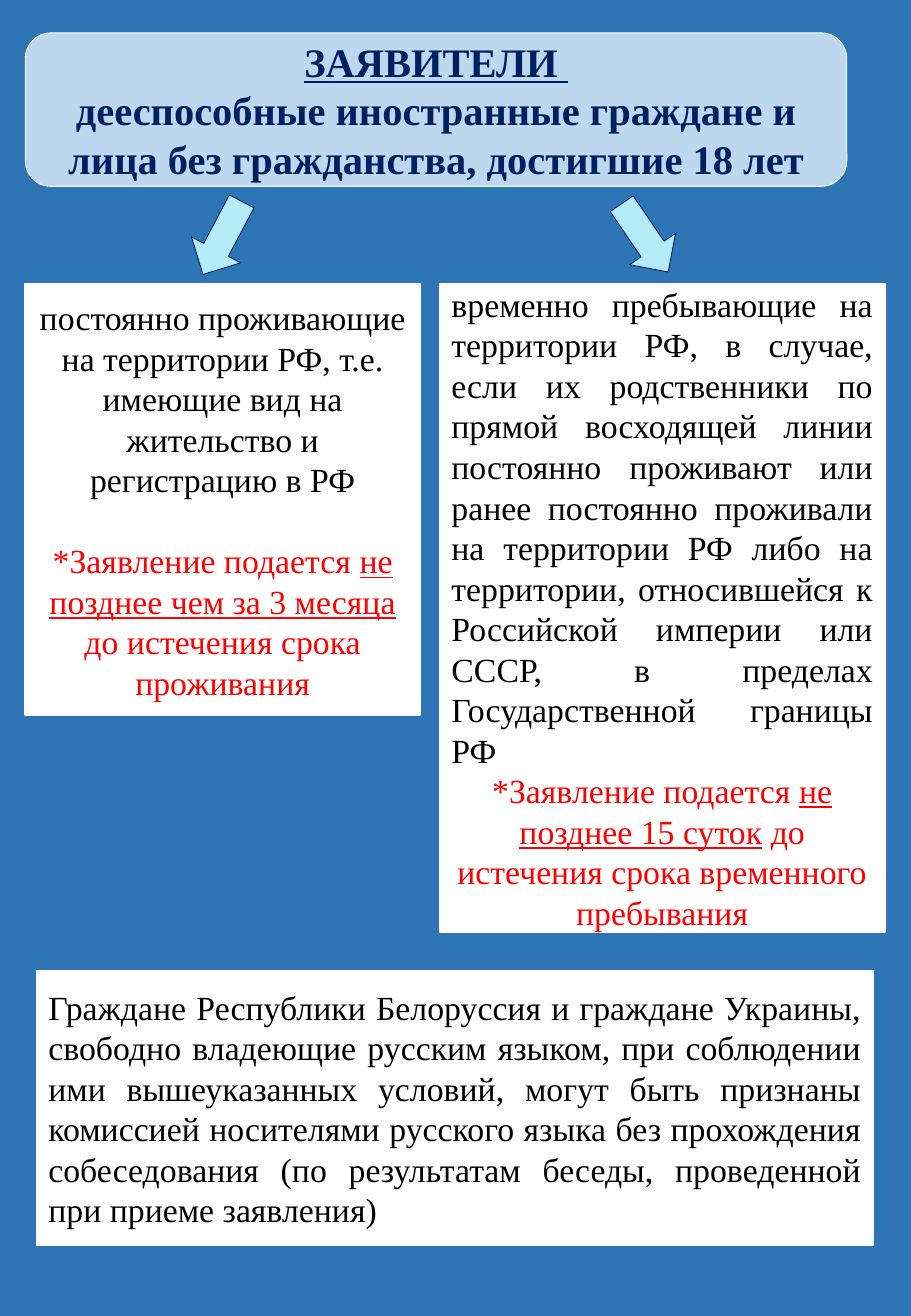
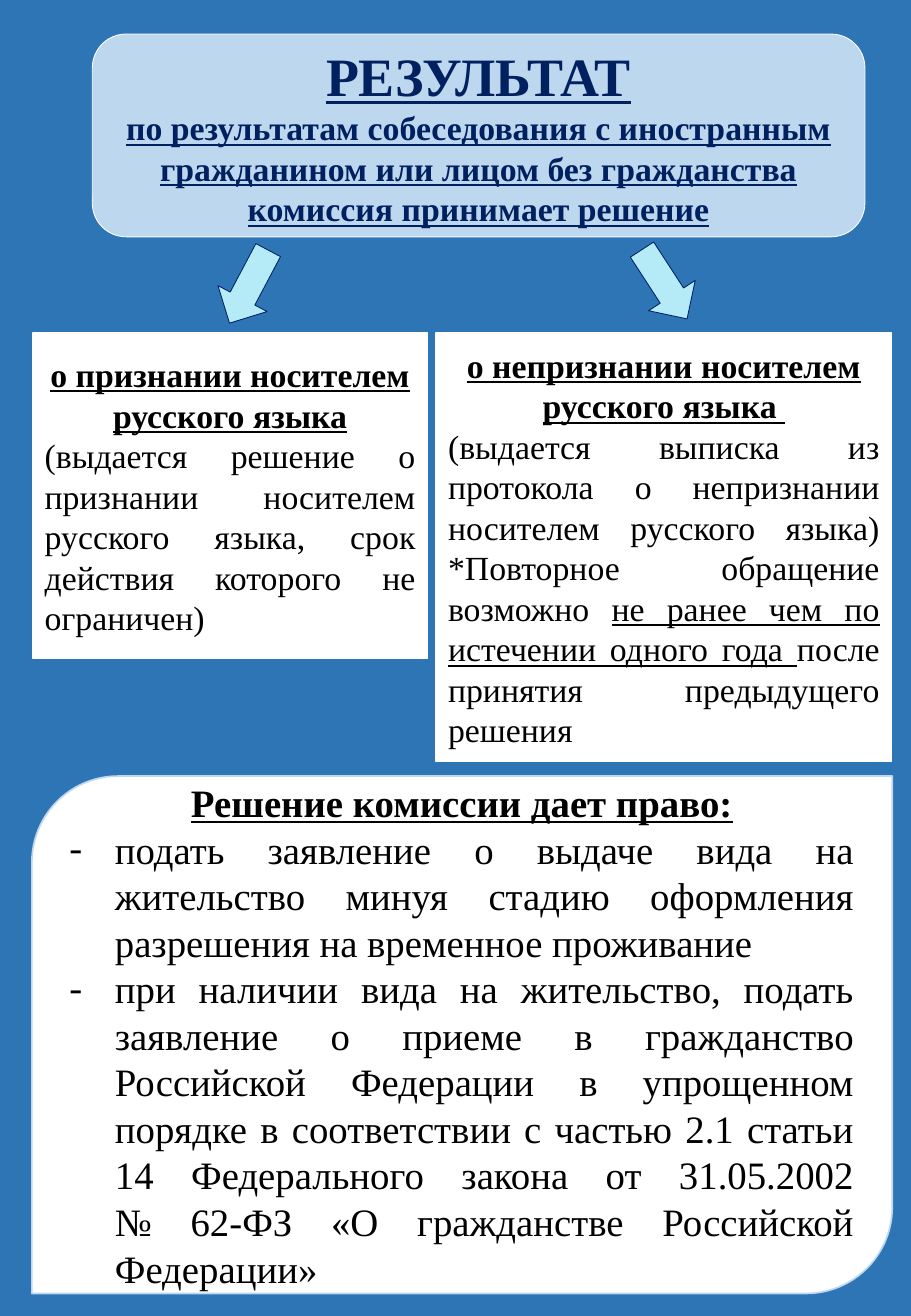
"""Builds two portrait slides on who may apply and what the commission decides."""
from dataclasses import dataclass

from lxml.etree import SubElement
from pptx import Presentation
from pptx.dml.color import RGBColor
from pptx.enum.shapes import MSO_SHAPE
from pptx.enum.text import MSO_ANCHOR, MSO_AUTO_SIZE, PP_ALIGN
from pptx.oxml.ns import qn
from pptx.util import Pt

COLORS = {
    "background": "2E75B6", "heading": "BDD7EE", "navy": "002060",
    "arrow": "B4EBF6", "white": "FFFFFF", "black": "000000", "red": "FF0000",
}
FONT = "Times New Roman"
SIDE_MARGIN = 7.2
CORNER_INSET = 0.0488
ARROW_SIZE = (49, 33)
BULLET_INDENT = 27
CENTER, JUSTIFY = PP_ALIGN.CENTER, PP_ALIGN.JUSTIFY


@dataclass
class Text:
    """A paragraph whose runs are (text, underlined) pairs."""
    runs: list
    align: PP_ALIGN = CENTER
    size: int = 20
    color: str = "black"
    bold: bool = False
    bullet: bool = False
    before: int = 0


SLIDES = [
    {
        "layout": 5,
        "heading": ((15, 19.5, 487, 91), [
            Text([("ЗАЯВИТЕЛИ ", True)], size=24, color="navy", bold=True),
            Text([("дееспособные иностранные граждане и лица без гражданства, "
                   "достигшие 18 лет", False)], size=24, color="navy", bold=True),
        ]),
        "arrows": [(107.3, 124.5, 117.9), (357.8, 124.5, 55.8)],
        "boxes": [
            ((15, 168, 234, 256), [
                Text([("постоянно проживающие на территории РФ, т.е. имеющие вид на "
                       "жительство и регистрацию в РФ", False)]),
                Text([("*Заявление подается ", False),
                      ("не позднее чем за 3 месяца ", True),
                      ("до истечения срока проживания", False)], color="red", before=24),
            ]),
            ((260.5, 168, 264, 384.5), [
                Text([("временно пребывающие на территории РФ, в случае, если их "
                       "родственники по прямой восходящей линии постоянно проживают или "
                       "ранее постоянно проживали на территории РФ либо на территории, "
                       "относившейся к Российской империи или СССР, в пределах "
                       "Государственной границы РФ", False)], JUSTIFY),
                Text([("*Заявление подается ", False), ("не позднее 15 суток", True),
                      (" до истечения срока временного пребывания", False)], color="red"),
            ]),
            ((21.6, 575.3, 496, 162.7), [
                Text([("Граждане Республики Белоруссия и граждане Украины, свободно "
                       "владеющие русским языком, при соблюдении ими вышеуказанных "
                       "условий, могут быть признаны комиссией носителями русского языка "
                       "без прохождения собеседования (по результатам беседы, проведенной "
                       "при приеме заявления)", False)], JUSTIFY),
            ]),
        ],
    },
    {
        "layout": 1,
        "heading": ((54.7, 20.2, 458, 120.2), [
            Text([("РЕЗУЛЬТАТ", True)], size=32, color="navy", bold=True),
            Text([("по результатам собеседования с иностранным гражданином или лицом "
                   "без гражданства комиссия принимает решение", True)],
                 color="navy", bold=True),
        ]),
        "arrows": [(123, 153.4, 117.9), (369.4, 152, 57)],
        "boxes": [
            ((19.4, 197.3, 234, 193), [
                Text([("о признании носителем русского языка", True)], bold=True),
                Text([("(выдается решение о признании носителем русского языка, срок "
                       "действия которого не ограничен)", False)], JUSTIFY),
            ]),
            ((258.5, 197.3, 270, 254), [
                Text([("о непризнании носителем русского языка ", True)], bold=True),
                Text([("(выдается выписка из протокола о непризнании носителем русского "
                       "языка) *Повторное обращение возможно ", False),
                      ("не ранее чем по истечении одного года ", True),
                      ("после принятия предыдущего решения", False)], JUSTIFY),
            ]),
        ],
        "rights": ((18.9, 460, 510, 306.7), [
            Text([("Решение комиссии дает право:", True)], size=23, bold=True),
            Text([("подать заявление о выдаче вида на жительство минуя стадию оформления "
                   "разрешения на временное проживание", False)],
                 JUSTIFY, 23, bullet=True),
            Text([("при наличии вида на жительство, подать заявление о приеме в "
                   "гражданство Российской Федерации в упрощенном порядке в соответствии "
                   "с частью 2.1 статьи 14 Федерального закона от 31.05.2002\n"
                   "№ 62-ФЗ «О гражданстве Российской Федерации»", False)],
                 JUSTIFY, 23, bullet=True),
        ]),
    },
]


def rgb(name):
    """Look up a palette colour."""
    return RGBColor.from_string(COLORS[name])


def add_shape(slide, kind, box, fill, line, width):
    """Add a filled, outlined shape without shadow."""
    shape = slide.shapes.add_shape(kind, *map(Pt, box))
    shape.shadow.inherit = False
    shape.fill.solid()
    shape.fill.fore_color.rgb = rgb(fill)
    shape.line.color.rgb = rgb(line)
    shape.line.width = Pt(width)
    return shape


def set_bullet(paragraph, bullet):
    """Give a paragraph a hanging dash, or no bullet at all."""
    properties = paragraph._p.get_or_add_pPr()
    indent = int(Pt(BULLET_INDENT)) if bullet else 0
    properties.set("marL", str(indent))
    properties.set("indent", str(-indent))
    if bullet:
        SubElement(properties, qn("a:buFont"), typeface=FONT)
        SubElement(properties, qn("a:buChar"), char="-")
    else:
        SubElement(properties, qn("a:buNone"))


def write(shape, texts, side_margin=SIDE_MARGIN):
    """Fill a shape with formatted paragraphs, centred vertically."""
    frame = shape.text_frame
    frame.word_wrap = True
    frame.auto_size = MSO_AUTO_SIZE.NONE
    frame.vertical_anchor = MSO_ANCHOR.MIDDLE
    frame.margin_left = frame.margin_right = Pt(side_margin)
    frame.margin_top = frame.margin_bottom = 0
    for index, text in enumerate(texts):
        paragraph = frame.add_paragraph() if index else frame.paragraphs[0]
        set_bullet(paragraph, text.bullet)
        paragraph.alignment = text.align
        paragraph.space_before = Pt(text.before)
        font = paragraph.font
        font.name, font.size, font.bold = FONT, Pt(text.size), text.bold
        font.color.rgb = rgb(text.color)
        for words, underlined in text.runs:
            for number, part in enumerate(words.split("\n")):
                if number:
                    paragraph.add_line_break()
                run = paragraph.add_run()
                run.text = part
                if underlined:
                    run.font.underline = True


def add_card(slide, placeholder, kind, box, texts, fill, line, width):
    """Lay a placeholder over a card with rounded corners."""
    add_shape(slide, kind, box, fill, line, width)
    slide.shapes._spTree.append(placeholder._element)
    placeholder.left, placeholder.top, placeholder.width, placeholder.height = map(Pt, box)
    write(placeholder, texts, SIDE_MARGIN + CORNER_INSET * min(box[2:]))


def build_slide(presentation, content):
    """Add one slide: heading, arrows, boxes and an optional list."""
    slide = presentation.slides.add_slide(presentation.slide_layouts[content["layout"]])
    add_card(slide, slide.shapes.title, MSO_SHAPE.ROUNDED_RECTANGLE,
             *content["heading"], "heading", "white", 0.5)
    for left, top, angle in content["arrows"]:
        arrow = add_shape(slide, MSO_SHAPE.RIGHT_ARROW, (left, top, *ARROW_SIZE),
                          "arrow", "navy", 0.5)
        arrow.rotation = angle
    for box, texts in content["boxes"]:
        write(add_shape(slide, MSO_SHAPE.RECTANGLE, box, "white", "white", 1), texts)
    if "rights" in content:
        add_card(slide, slide.placeholders[1], MSO_SHAPE.ROUND_2_DIAG_RECTANGLE,
                 *content["rights"], "white", "heading", 1)


def main():
    """Build and save the presentation."""
    presentation = Presentation()
    presentation.slide_width, presentation.slide_height = Pt(540), Pt(780)
    background = presentation.slide_master.background.fill
    background.solid()
    background.fore_color.rgb = rgb("background")
    for content in SLIDES:
        build_slide(presentation, content)
    presentation.save("out.pptx")


if __name__ == "__main__":
    main()
